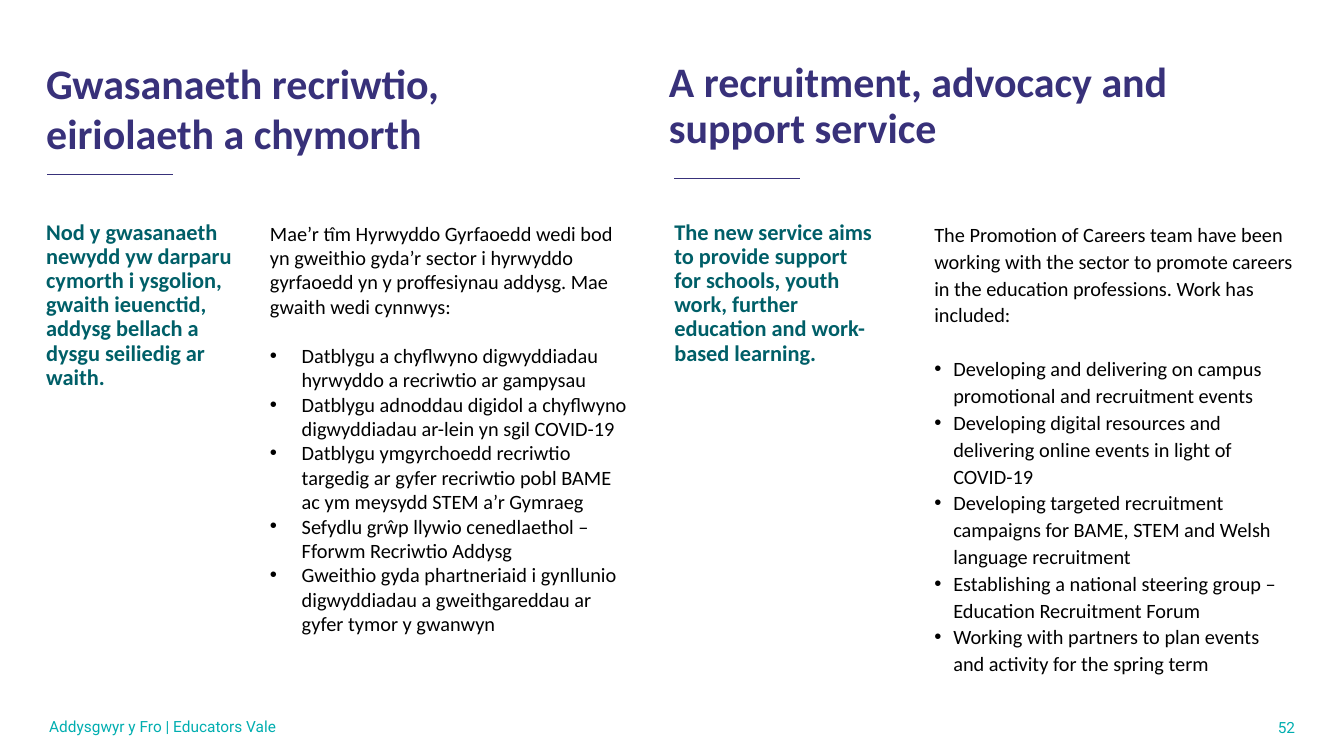
"""Build a bilingual slide on a recruitment, advocacy and support service."""
from lxml import etree
from pptx import Presentation
from pptx.dml.color import RGBColor
from pptx.enum import shapes, text
from pptx.oxml import ns
from pptx.util import Cm, Pt

PURPLE, GREEN, TEAL, BLACK = "38317A", "005F68", "00AEB0", "000000"
LEFT, RIGHT = text.PP_ALIGN.LEFT, text.PP_ALIGN.RIGHT
TOP, MIDDLE, BOTTOM = (text.MSO_ANCHOR.TOP, text.MSO_ANCHOR.MIDDLE,
                       text.MSO_ANCHOR.BOTTOM)

WELSH = dict(
    title="Gwasanaeth recriwtio, eiriolaeth a chymorth",
    title_at=(0.91, 1.65, 14.43, 2.13), title_spacing=1.0,
    rule_at=(1.19, 4.39),
    aim="Nod y gwasanaeth newydd yw darparu cymorth i ysgolion, gwaith "
        "ieuenctid, addysg bellach a dysgu seiliedig ar waith.",
    aim_at=(0.91, 5.44, 5.64, 7.67),
    intro="Mae’r tîm Hyrwyddo Gyrfaoedd wedi bod yn gweithio gyda’r sector i "
          "hyrwyddo gyrfaoedd yn y proffesiynau addysg. Mae gwaith wedi cynnwys:",
    work=[
        "Datblygu a chyflwyno digwyddiadau hyrwyddo a recriwtio ar gampysau",
        "Datblygu adnoddau digidol a chyflwyno digwyddiadau ar-lein yn sgil COVID-19",
        "Datblygu ymgyrchoedd recriwtio targedig ar gyfer recriwtio pobl BAME "
        "ac ym meysydd STEM a’r Gymraeg",
        "Sefydlu grŵp llywio cenedlaethol – Fforwm Recriwtio Addysg",
        "Gweithio gyda phartneriaid i gynllunio digwyddiadau a gweithgareddau "
        "ar gyfer tymor y gwanwyn",
    ],
    work_at=(6.55, 5.44, 9.58, 12.32), work_spacing=1.0, indent=0.8,
)
ENGLISH = dict(
    title="A recruitment, advocacy and support service",
    title_at=(16.61, 1.63, 15.7, 2.13), title_spacing=0.9,
    rule_at=(16.99, 4.5),
    aim="The new service aims to provide support for schools, youth work, "
        "further education and work-based learning.",
    aim_at=(16.74, 5.44, 5.64, 7.67),
    intro="The Promotion of Careers team have been working with the sector to "
          "promote careers in the education professions. Work has included:",
    work=[
        "Developing and delivering on campus promotional and recruitment events",
        "Developing digital resources and delivering online events in light of COVID-19",
        "Developing targeted recruitment campaigns for BAME, STEM and Welsh "
        "language recruitment",
        "Establishing a national steering group – Education Recruitment Forum",
        "Working with partners to plan events and activity for the spring term",
    ],
    work_at=(23.29, 5.41, 9.58, 12.32), work_spacing=1.1, indent=0.48,
)
FOOTER = "Addysgwyr y Fro | Educators Vale"
FOOTER_AT = (0.99, 17.93, 29.21, 0.74)
NUMBER = "52"
NUMBER_AT = (25.27, 17.81, 7.62, 1.02)
RULE_LENGTH = 3.17
WORK_SIZE = 14.5
LINE_HEIGHT = 1.22


def color(value):
    return RGBColor.from_string(value)


def place(sp, at, anchor=TOP):
    """Position a text shape and return its emptied, wrapping frame."""
    sp.left, sp.top, sp.width, sp.height = map(Cm, at)
    tf = sp.text_frame
    tf.word_wrap = True
    tf.auto_size = text.MSO_AUTO_SIZE.NONE
    tf.vertical_anchor = anchor
    return tf


def write(tf, words, size, fill, font="Calibri", bold=False, align=LEFT,
          spacing=1.0, before=0, indent=None):
    """Add one formatted paragraph, bulleted when an indent is given."""
    p = tf.paragraphs[0] if not tf.text else tf.add_paragraph()
    pPr = p._p.get_or_add_pPr()
    hang = Cm(indent or 0)
    pPr.set("marL", str(hang))
    pPr.set("indent", str(-hang))
    p.alignment, p.line_spacing = align, spacing
    p.space_before, p.space_after = Pt(before), Pt(0)
    if indent:
        etree.SubElement(pPr, ns.qn("a:buFont")).set("typeface", "Arial")
        etree.SubElement(pPr, ns.qn("a:buChar")).set("char", "•")
    else:
        etree.SubElement(pPr, ns.qn("a:buNone"))
    r = p.add_run()
    r.text = words
    r.font.size, r.font.name, r.font.bold = Pt(size), font, bold
    r.font.color.rgb = color(fill)


def draw_rule(s, x, y):
    """Draw the short line under a heading."""
    line = s.shapes.add_connector(shapes.MSO_CONNECTOR.STRAIGHT, Cm(x), Cm(y),
                                  Cm(x + RULE_LENGTH), Cm(y))
    line.line.color.rgb = color(PURPLE)
    line.line.width = Pt(0.75)
    etree.SubElement(line._element.spPr, ns.qn("a:effectLst"))


def add_language(s, half, title, aim, work):
    """Fill one language half of the slide."""
    write(place(title, half["title_at"], MIDDLE), half["title"], 30, PURPLE,
          bold=True, spacing=half["title_spacing"])
    draw_rule(s, *half["rule_at"])
    write(place(aim, half["aim_at"]), half["aim"], 16, GREEN, bold=True,
          spacing=0.9)
    tf = place(work, half["work_at"])
    spacing = half["work_spacing"]
    write(tf, half["intro"], WORK_SIZE, BLACK, spacing=spacing)
    gap = round(WORK_SIZE * LINE_HEIGHT * spacing, 1)
    for i, item in enumerate(half["work"]):
        write(tf, item, WORK_SIZE, BLACK, spacing=spacing,
              before=0 if i else gap, indent=half["indent"])


def main():
    prs = Presentation()
    prs.slide_width, prs.slide_height = Cm(33.87), Cm(19.05)
    s = prs.slides.add_slide(prs.slide_layouts.get_by_name("Comparison"))
    ph = {sp.placeholder_format.idx: sp for sp in s.placeholders}
    english_title, footer, number = (
        s.shapes.add_textbox(0, 0, 0, 0) for _ in range(3))
    add_language(s, WELSH, ph[0], ph[1], ph[2])
    add_language(s, ENGLISH, english_title, ph[3], ph[4])
    write(place(footer, FOOTER_AT, BOTTOM), FOOTER, 11, TEAL, font="Roboto",
          spacing=0.9)
    write(place(number, NUMBER_AT, MIDDLE), NUMBER, 11, TEAL, font="Roboto",
          align=RIGHT)
    prs.save("out.pptx")


if __name__ == "__main__":
    main()
